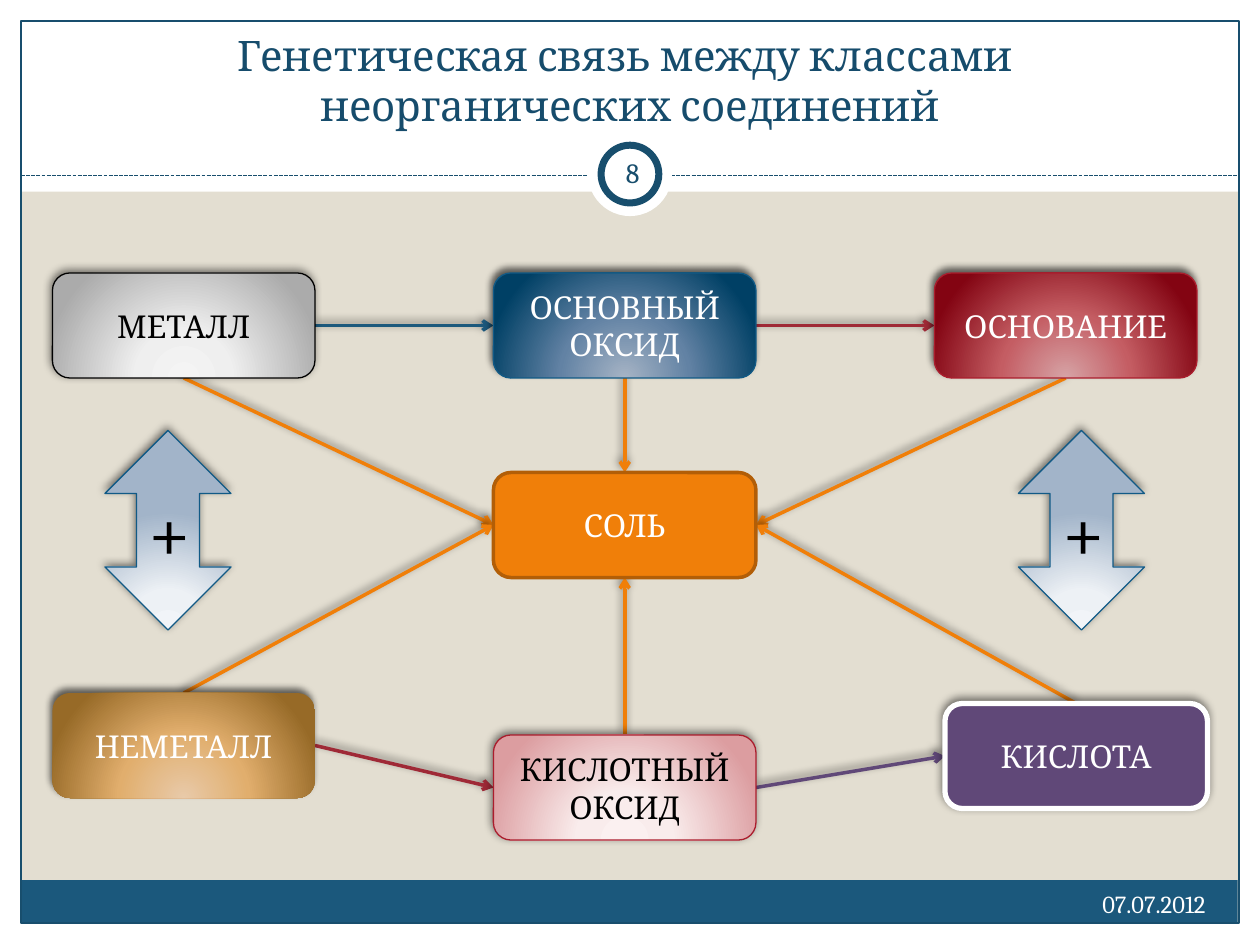
import pptx
import pptx.util
import pptx.dml.color
import pptx.enum.dml
import pptx.enum.shapes
import pptx.enum.text
import pptx.oxml
import pptx.oxml.ns

Pt = pptx.util.Pt
SHAPE = pptx.enum.shapes.MSO_SHAPE
ALIGN = pptx.enum.text.PP_ALIGN
ANCHOR = pptx.enum.text.MSO_ANCHOR
qn = pptx.oxml.ns.qn

COLORS = {
    "paper": "E3DED1", "white": "FFFFFF", "black": "000000", "frame": "184E6D",
    "title": "164C6C", "blue": "1B587C", "red": "9F2936", "orange": "F07F09",
    "salt edge": "B25E07", "purple": "604878", "blue edge": "115A86", "red edge": "AB1D2D",
}
# Gradient stops: (percent, colour), from the lower centre outwards
GRADIENTS = {
    "silver": [(0, "F4F4F4"), (34, "EFEFEF"), (100, "ABABAB")],
    "navy": [(0, "A6B4C5"), (46, "6282A4"), (100, "004065")],
    "crimson": [(0, "D6A3A6"), (46, "C45D63"), (100, "830412")],
    "bronze": [(0, "E8CAA9"), (46, "E1AE6D"), (100, "976A27")],
    "pink": [(0, "FBF0F0"), (34, "F9ECEC"), (100, "DC9DA0")],
    "ice": [(0, "F1F4F8"), (34, "EDF1F5"), (100, "A2B4C9")],
}
# Shadows: opacity %, blur, distance
SOFT, DEEP = (50, 5, 2), (60, 4, 3)

TITLE = "Генетическая связь между классами \vнеорганических соединений"
DATE = "07.07.2012"
NUMBER = "8"

NODE_W, NODE_H = 150, 60
LEFT, MIDDLE, RIGHT = (30 + 252 * i for i in range(3))
# Node: left, top, text, fill, edge, edge width, text colour, shadow
NODES = {
    "metal": (LEFT, 156, "МЕТАЛЛ", "silver", "black", 0.75, "black", SOFT),
    "basic oxide": (MIDDLE, 156, "ОСНОВНЫЙ\nОКСИД", "navy", "blue edge", 0.75, "white", DEEP),
    "base": (RIGHT, 156, "ОСНОВАНИЕ", "crimson", "red edge", 0.75, "white", DEEP),
    "salt": (MIDDLE, 270, "СОЛЬ", "orange", "salt edge", 2, "white", None),
    "nonmetal": (LEFT, 396, "НЕМЕТАЛЛ", "bronze", None, 0, "white", DEEP),
    "acid oxide": (MIDDLE, 420, "КИСЛОТНЫЙ\nОКСИД", "pink", "red edge", 0.75, "black", SOFT),
    "acid": (RIGHT + 6, 402, "КИСЛОТА", "purple", "white", 3, "white", SOFT),
}
TOP_SIDE, LEFT_SIDE, BOTTOM_SIDE, RIGHT_SIDE = range(4)
LINKS = [
    ("metal", BOTTOM_SIDE, "salt", LEFT_SIDE, "orange"),
    ("metal", RIGHT_SIDE, "basic oxide", LEFT_SIDE, "blue"),
    ("basic oxide", RIGHT_SIDE, "base", LEFT_SIDE, "red"),
    ("nonmetal", TOP_SIDE, "salt", LEFT_SIDE, "orange"),
    ("acid oxide", TOP_SIDE, "salt", BOTTOM_SIDE, "orange"),
    ("nonmetal", RIGHT_SIDE, "acid oxide", LEFT_SIDE, "red"),
    ("acid oxide", RIGHT_SIDE, "acid", LEFT_SIDE, "purple"),
    ("base", BOTTOM_SIDE, "salt", RIGHT_SIDE, "orange"),
    ("acid", TOP_SIDE, "salt", RIGHT_SIDE, "orange"),
    ("basic oxide", BOTTOM_SIDE, "salt", TOP_SIDE, "orange"),
]
PLUS_LEFTS = (60, 582)


def rgb(name):
    return pptx.dml.color.RGBColor.from_string(COLORS[name])


def xml(text):
    return pptx.oxml.parse_xml(
        text.replace(">", " " + pptx.oxml.ns.nsdecls("a") + ">", 1))


def write(frame, text, size=18, color="white", align=ALIGN.CENTER,
          anchor=ANCHOR.MIDDLE, inset=3.6):
    frame.word_wrap = True
    frame.vertical_anchor = anchor
    frame.margin_top = frame.margin_bottom = Pt(3.6)
    frame.margin_left = frame.margin_right = Pt(inset)
    frame.text = text
    for paragraph in frame.paragraphs:
        paragraph.alignment = align
        for run in paragraph.runs:
            run.font.name = "Cambria"
            run.font.size = Pt(size)
            run.font.color.rgb = rgb(color)


def cast_shadow(properties, shadow):
    effects = properties.find(qn("a:effectLst"))
    if effects is None:
        effects = xml("<a:effectLst></a:effectLst>")
        properties.append(effects)
    if shadow:
        opacity, blur, distance = shadow
        effects.append(xml(
            f'<a:outerShdw blurRad="{Pt(blur)}" dist="{Pt(distance)}" dir="{245 * 60000}" '
            f'algn="ctr" rotWithShape="0"><a:srgbClr val="{COLORS["black"]}">'
            f'<a:alpha val="{opacity * 1000}"/></a:srgbClr></a:outerShdw>'))


def draw(kind, left, top, width, height, fill=None, edge=None, weight=0.75, shadow=None):
    shape = slide.shapes.add_shape(kind, Pt(left), Pt(top), Pt(width), Pt(height))
    properties = shape._element.spPr
    if fill in GRADIENTS:
        shape.fill.solid()
        stops = "".join(f'<a:gs pos="{at * 1000}"><a:srgbClr val="{color}"/></a:gs>'
                        for at, color in GRADIENTS[fill])
        properties.replace(properties.find(qn("a:solidFill")), xml(
            f'<a:gradFill rotWithShape="1"><a:gsLst>{stops}</a:gsLst><a:path path="circle">'
            '<a:fillToRect l="50000" t="155000" r="50000" b="-55000"/></a:path></a:gradFill>'))
    elif fill:
        shape.fill.solid()
        shape.fill.fore_color.rgb = rgb(fill)
    else:
        shape.fill.background()
    if edge:
        shape.line.color.rgb = rgb(edge)
        shape.line.width = Pt(weight)
    else:
        shape.line.fill.background()
    shape.shadow.inherit = False
    cast_shadow(properties, shadow)
    return shape


def draw_line(color, weight, start=(0, 0), end=(0, 0)):
    line = slide.shapes.add_connector(
        pptx.enum.shapes.MSO_CONNECTOR.STRAIGHT, *(Pt(v) for v in start + end))
    line.line.color.rgb = rgb(color)
    line.line.width = Pt(weight)
    return line


deck = pptx.Presentation()
deck.slide_width, deck.slide_height = Pt(720), Pt(540)
slide = deck.slides.add_slide(deck.slide_layouts[5])
slide.background.fill.solid()
slide.background.fill.fore_color.rgb = rgb("paper")

# Page border, footer band and frame
for box in [(0, 528, 720, 12), (0, 0, 720, 109.5), (0, 0, 12, 540), (708, 0, 12, 540)]:
    draw(SHAPE.RECTANGLE, *box, fill="white")
draw(SHAPE.RECTANGLE, 11.75, 503, 695.5, 24.5, fill="blue")
draw(SHAPE.RECTANGLE, 12, 12, 696, 515.5, edge="frame")

# Header rule and number badge
rule = draw_line("frame", 0.75, (12, 100.5), (708, 100.5))
rule.line.dash_style = pptx.enum.dml.MSO_LINE.SQUARE_DOT
cast_shadow(rule._element.spPr, None)
draw(SHAPE.OVAL, 336, 75.5, 48, 48, fill="white")
draw(SHAPE.OVAL, 343.5, 83, 33, 33, fill="white", edge="frame", weight=4)

# Title, brought in front of the header
title = slide.shapes.title
title.left, title.top, title.width, title.height = Pt(24), Pt(18), Pt(672), Pt(60)
write(title.text_frame, TITLE, size=24, color="title", anchor=ANCHOR.BOTTOM, inset=7.2)
slide.shapes._spTree.append(title._element)

# Date and slide number
date = slide.shapes.add_textbox(Pt(456), Pt(504.5), Pt(240), Pt(28.5))
write(date.text_frame, DATE, size=14, align=ALIGN.RIGHT, anchor=ANCHOR.TOP, inset=7.2)
number = slide.shapes.add_textbox(Pt(343.5), Pt(81), Pt(36), Pt(34.5))
write(number.text_frame, NUMBER, size=16, color="frame")

# Substance classes
nodes = {}
for name, (left, top, text, fill, edge, weight, color, shadow) in NODES.items():
    nodes[name] = draw(SHAPE.ROUNDED_RECTANGLE, left, top, NODE_W, NODE_H,
                       fill, edge, weight, shadow)
    write(nodes[name].text_frame, text, color=color)

# Links, placed behind the classes
for source, source_side, target, target_side, color in LINKS:
    link = draw_line(color, 2)
    link.begin_connect(nodes[source], source_side)
    link.end_connect(nodes[target], target_side)
    link.line._get_or_add_ln().append(xml('<a:tailEnd type="arrow"></a:tailEnd>'))
    cast_shadow(link._element.spPr, SOFT)
    nodes["metal"]._element.addprevious(link._element)

# Plus arrows
for left in PLUS_LEFTS:
    plus = draw(SHAPE.UP_DOWN_ARROW, left, 246, 72, 114, "ice", "blue edge", shadow=SOFT)
    write(plus.text_frame, "+", size=44, color="black", inset=7.2)

deck.save("out.pptx")
